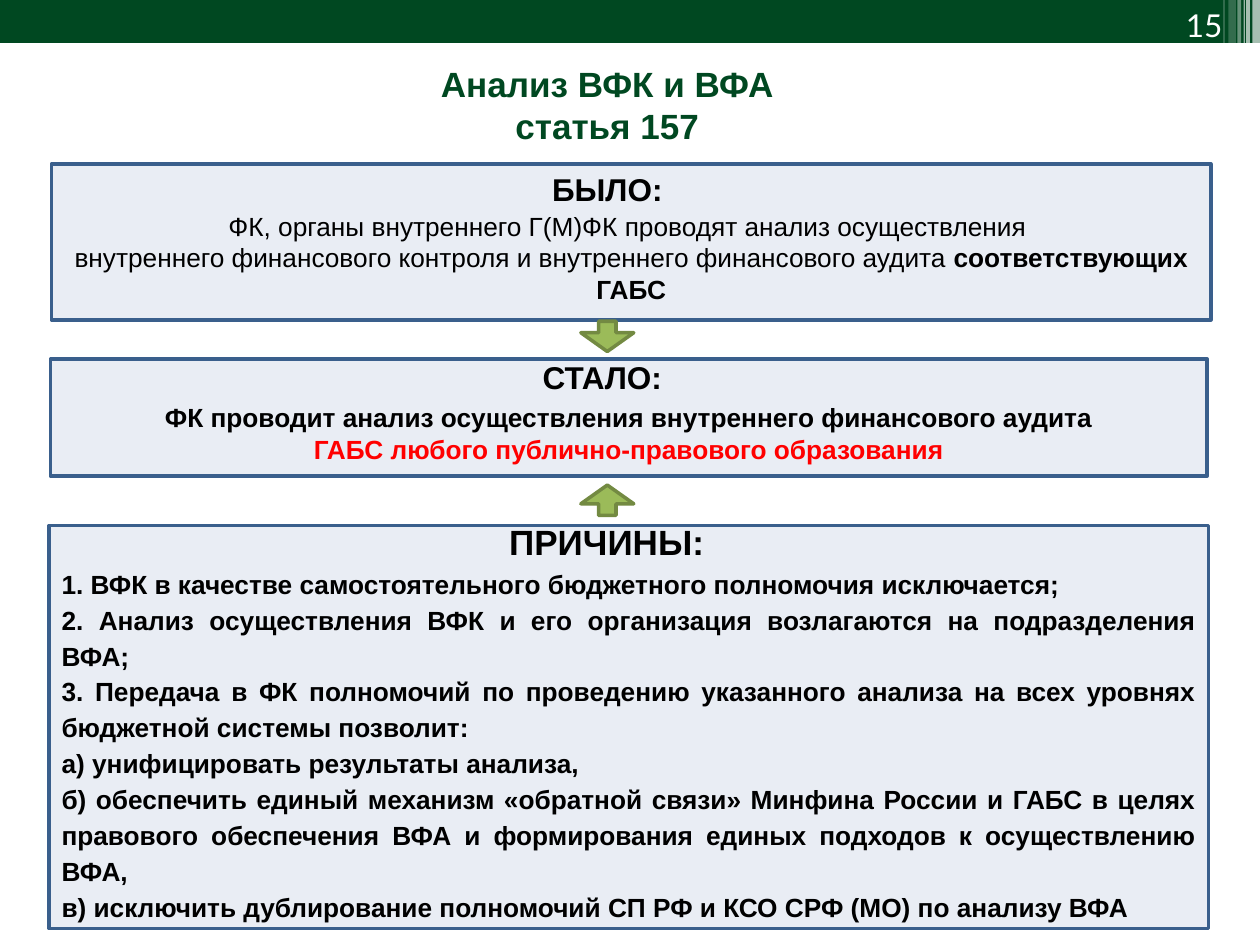
from lxml import etree
from pptx import Presentation
from pptx.dml.color import RGBColor
from pptx.enum.shapes import MSO_SHAPE
from pptx.enum.text import MSO_ANCHOR, PP_ALIGN
from pptx.oxml.ns import qn
from pptx.util import Inches, Pt

RECTANGLE = MSO_SHAPE.RECTANGLE
DOWN, UP = MSO_SHAPE.DOWN_ARROW, MSO_SHAPE.UP_ARROW
TOP, MIDDLE, BOTTOM = MSO_ANCHOR.TOP, MSO_ANCHOR.MIDDLE, MSO_ANCHOR.BOTTOM
CENTER, RIGHT, JUSTIFY = PP_ALIGN.CENTER, PP_ALIGN.RIGHT, PP_ALIGN.JUSTIFY

DARK_GREEN = RGBColor(0x00, 0x48, 0x21)
WHITE = RGBColor(0xFF, 0xFF, 0xFF)
BLACK = RGBColor(0x00, 0x00, 0x00)
RED = RGBColor(0xFF, 0x00, 0x00)
PANEL_FILL = RGBColor(0xE9, 0xED, 0xF4)
PANEL_LINE = RGBColor(0x3A, 0x5F, 0x8C)
ARROW_FILL = RGBColor(0x9B, 0xBB, 0x59)
ARROW_LINE = RGBColor(0x73, 0x8A, 0x42)

WIDTH, HEIGHT = 10, 7.5
BAND_HEIGHT = 0.34
ARROW_CENTER, ARROW_WIDTH, ARROW_HEIGHT = 4.82, 0.42, 0.24
BODY_SIZE = 15
HEADING_ROOM = 0.29  # top inset that keeps body text below its heading

# Content: a paragraph is a list of (text, bold, colour); "\n" is a line break
BEFORE = [[
    ("ФК, органы внутреннего Г(М)ФК проводят анализ осуществления \n"
     "внутреннего финансового контроля и внутреннего финансового аудита ", False, BLACK),
    ("соответствующих ГАБС", True, BLACK),
]]
AFTER = [
    [("ФК проводит анализ осуществления внутреннего финансового аудита", True, BLACK)],
    [("ГАБС любого публично-правового образования", True, RED)],
]
REASONS = [[(line, True, BLACK)] for line in (
    "1. ВФК в качестве самостоятельного бюджетного полномочия исключается;",
    "2. Анализ осуществления ВФК и его организация возлагаются на подразделения ВФА;",
    "3. Передача в ФК полномочий по проведению указанного анализа на всех уровнях "
    "бюджетной системы позволит: ",
    "а) унифицировать результаты анализа, ",
    "б) обеспечить единый механизм «обратной связи» Минфина России и ГАБС в целях "
    "правового обеспечения ВФА и формирования единых подходов к осуществлению ВФА, ",
    "в) исключить дублирование полномочий СП РФ и КСО СРФ (МО) по анализу ВФА",
)]
TITLE = [[(line, True, DARK_GREEN)] for line in ("Анализ ВФК и ВФА", "статья 157")]

# Panels: place, paragraphs, alignment, anchor, line spacing, top inset
PANELS = [
    ((0.39, 4.17, 9.2, 3.2), REASONS, JUSTIFY, BOTTOM, 1.14, 0.05),
    ((0.4, 2.85, 9.18, 0.93), AFTER, CENTER, MIDDLE, 1, HEADING_ROOM),
    ((0.41, 1.3, 9.2, 1.24), BEFORE, CENTER, MIDDLE, 1, HEADING_ROOM),
]
# Captions: place, paragraphs, size, font, alignment
CAPTIONS = [
    ((8.9, 0, 0.9, 0.37), [[("15", False, WHITE)]], 18, "Lato", RIGHT),
    ((-0.18, 0.45, 10, 0.77), TITLE, 20, "Arial", CENTER),
    ((3.29, 4.08, 3.05, 0.44), [[("ПРИЧИНЫ:", True, BLACK)]], 20, "Arial", CENTER),
    ((2.49, 2.79, 4.58, 0.4), [[("СТАЛО:", True, BLACK)]], 18, "Arial", CENTER),
    ((2.24, 1.3, 5.16, 0.4), [[("БЫЛО:", True, BLACK)]], 18, "Arial", CENTER),
]
# Stripes on the header band: left, width, height, opacity in percent
STRIPES = [
    (9.94, 0.06, 0.34, 65), (9.89, 0.03, 0.34, 65), (9.87, 0.01, 0.34, 60),
    (9.82, 0.03, 0.34, 40), (9.75, 0.06, 0.36, 20), (9.71, 0.01, 0.36, 30),
]
ARROWS = [(DOWN, 2.67), (UP, 3.97)]  # kind, vertical centre


def add_shape(slide, kind, place, fill, line=None):
    shape = slide.shapes.add_shape(kind, *map(Inches, place))
    shape.shadow.inherit = False
    shape.fill.solid()
    shape.fill.fore_color.rgb = fill
    if line is None:
        shape.line.fill.background()
    else:
        shape.line.color.rgb = line
        shape.line.width = Pt(2)
    return shape


def set_opacity(shape, percent):
    color = shape.fill._xPr.find(qn("a:solidFill"))[0]
    etree.SubElement(color, qn("a:alpha")).set("val", str(percent * 1000))


def write(frame, paragraphs, size, font, align, anchor=TOP, spacing=1):
    frame.word_wrap = True
    frame.vertical_anchor = anchor
    for index, parts in enumerate(paragraphs):
        para = frame.paragraphs[0] if index == 0 else frame.add_paragraph()
        para.alignment = align
        para.line_spacing = spacing
        for text, bold, color in parts:
            for number, line in enumerate(text.split("\n")):
                if number:
                    para.add_line_break()
                span = para.add_run()
                span.text = line
                span.font.name = font
                span.font.size = Pt(size)
                span.font.bold = bold
                span.font.color.rgb = color


def main():
    deck = Presentation()
    deck.slide_width, deck.slide_height = Inches(WIDTH), Inches(HEIGHT)
    slide = deck.slides.add_slide(deck.slide_layouts[6])

    # Header band with translucent stripes
    add_shape(slide, RECTANGLE, (0, 0, WIDTH, BAND_HEIGHT), DARK_GREEN)
    for left, width, height, opacity in STRIPES:
        stripe = add_shape(slide, RECTANGLE, (left, 0, width, height), WHITE)
        set_opacity(stripe, opacity)

    # Panels
    for place, paragraphs, align, anchor, spacing, inset in PANELS:
        panel = add_shape(slide, RECTANGLE, place, PANEL_FILL, PANEL_LINE)
        panel.text_frame.margin_top = Inches(inset)
        write(panel.text_frame, paragraphs, BODY_SIZE, "Arial", align, anchor, spacing)

    # Slide number, title and panel headings
    for place, paragraphs, size, font, align in CAPTIONS:
        box = slide.shapes.add_textbox(*map(Inches, place))
        write(box.text_frame, paragraphs, size, font, align)

    # Arrows pointing at the middle panel
    for kind, middle in ARROWS:
        place = (ARROW_CENTER - ARROW_WIDTH / 2, middle - ARROW_HEIGHT / 2,
                 ARROW_WIDTH, ARROW_HEIGHT)
        arrow = add_shape(slide, kind, place, ARROW_FILL, ARROW_LINE)
        arrow.adjustments[0], arrow.adjustments[1] = 0.33, 0.62

    deck.save("out.pptx")


if __name__ == "__main__":
    main()
